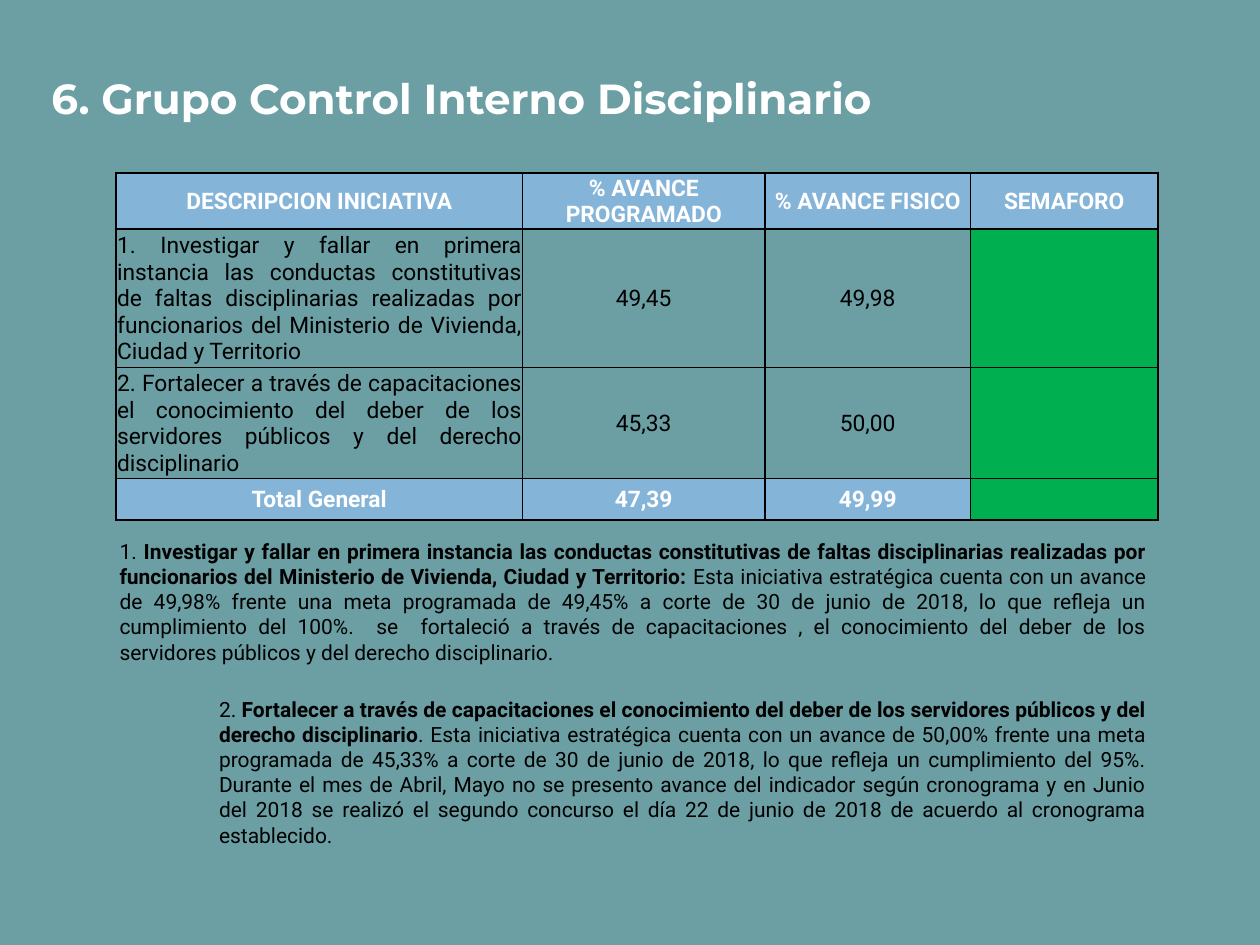
from dataclasses import dataclass

from lxml import etree
from pptx import Presentation, util as u
from pptx.dml.color import RGBColor
from pptx.enum import text
from pptx.oxml.ns import qn

WIDTH, HEIGHT = 10, 7.5


@dataclass(frozen=True)
class Theme:
    background: str = "6B9FA4"
    header: str = "85B4D9"
    signal: str = "00B050"
    light: str = "FFFFFF"
    dark: str = "000000"
    title_font: str = "Montserrat"
    body_font: str = "Roboto"
    title_size: int = 24
    table_size: int = 13
    note_size: int = 12


THEME = Theme()
CENTER, JUSTIFY = text.PP_ALIGN.CENTER, text.PP_ALIGN.JUSTIFY

HEADERS = ["DESCRIPCION INICIATIVA", "% AVANCE PROGRAMADO", "% AVANCE FISICO", "SEMAFORO"]
INITIATIVES = [
    ["1. Investigar y fallar en primera instancia las conductas constitutivas de faltas "
     "disciplinarias realizadas por funcionarios del Ministerio de Vivienda, Ciudad y Territorio",
     "49,45", "49,98", ""],
    ["2. Fortalecer a través de capacitaciones el conocimiento del deber de los servidores "
     "públicos y del derecho disciplinario", "45,33", "50,00", ""],
]
TOTALS = ["Total General", "47,39", "49,99", ""]
COLUMN_SHARES = [0.39, 0.233, 0.197, 0.18]
ROW_SHARES = [0.16, 0.4, 0.32, 0.12]

# Each note: number, bold heading, explanation
NOTES = [
    ("1. ",
     "Investigar y fallar en primera instancia las conductas constitutivas de faltas "
     "disciplinarias realizadas por funcionarios del Ministerio de Vivienda, Ciudad y Territorio: ",
     "Esta iniciativa estratégica cuenta con un avance de 49,98% frente una meta programada de "
     "49,45% a corte de 30 de junio de 2018, lo que refleja un cumplimiento del 100%.  se  "
     "fortaleció a través de capacitaciones , el conocimiento del deber de los servidores "
     "públicos y del derecho disciplinario."),
    ("2. ",
     "Fortalecer a través de capacitaciones el conocimiento del deber de los servidores "
     "públicos y del derecho disciplinario",
     ". Esta iniciativa estratégica cuenta con un avance de 50,00% frente una meta programada de "
     "45,33% a corte de 30 de junio de 2018, lo que refleja un cumplimiento del 95%. Durante el "
     "mes de Abril, Mayo no se presento avance del indicador según cronograma y en Junio del "
     "2018 se realizó el segundo concurso el día 22 de junio de 2018 de acuerdo al cronograma "
     "establecido."),
]


def box(left, top, width, height):
    """Turn shares of the slide into lengths."""
    return (u.Inches(left * WIDTH), u.Inches(top * HEIGHT),
            u.Inches(width * WIDTH), u.Inches(height * HEIGHT))


def add_run(paragraph, words, size, color, bold=False, font=THEME.body_font):
    run = paragraph.add_run()
    run.text = words
    run.font.name, run.font.size, run.font.bold = font, u.Pt(size), bold
    run.font.color.rgb = RGBColor.from_string(color)


def add_text_frame(slide, area):
    frame = slide.shapes.add_textbox(*area).text_frame
    frame.word_wrap = True
    return frame


def add_title(slide, area, words):
    frame = add_text_frame(slide, area)
    frame.vertical_anchor = text.MSO_ANCHOR.BOTTOM
    frame.margin_top = frame.margin_bottom = u.Inches(0.1)
    add_run(frame.paragraphs[0], words, THEME.title_size, THEME.light, True, THEME.title_font)


def add_note(slide, area, number, heading, explanation):
    paragraph = add_text_frame(slide, area).paragraphs[0]
    paragraph.alignment = JUSTIFY
    for words, bold in ((number, False), (heading, True), (explanation, False)):
        add_run(paragraph, words, THEME.note_size, THEME.dark, bold)


def add_borders(cell):
    properties = cell._tc.get_or_add_tcPr()
    for side in ("a:lnL", "a:lnR", "a:lnT", "a:lnB"):
        line = etree.SubElement(properties, qn(side), w=str(u.Pt(1)))
        fill = etree.SubElement(line, qn("a:solidFill"))
        etree.SubElement(fill, qn("a:srgbClr"), val=THEME.dark)


def fill_cell(cell, words, emphasized, alignment, fill):
    add_borders(cell)
    if fill:
        cell.fill.solid()
        cell.fill.fore_color.rgb = RGBColor.from_string(fill)
    else:
        cell.fill.background()
    cell.margin_left = cell.margin_right = cell.margin_top = u.Inches(0.01)
    cell.margin_bottom = 0
    cell.vertical_anchor = text.MSO_ANCHOR.MIDDLE
    paragraph = cell.text_frame.paragraphs[0]
    paragraph.alignment = alignment
    if words:
        color = THEME.light if emphasized else THEME.dark
        add_run(paragraph, words, THEME.table_size, color, emphasized)


def add_progress_table(slide, area):
    rows = [HEADERS, *INITIATIVES, TOTALS]
    table = slide.shapes.add_table(len(rows), len(HEADERS), *area).table
    table.first_row = table.horz_banding = False
    for column, share in zip(table.columns, COLUMN_SHARES):
        column.width = int(area[2] * share)
    for row, share in zip(table.rows, ROW_SHARES):
        row.height = int(area[3] * share)

    for row_index, values in enumerate(rows):
        emphasized = values in (HEADERS, TOTALS)
        for column_index, words in enumerate(values):
            justified = column_index == 0 and not emphasized
            # Cells without words are the traffic lights
            fill = (THEME.header if emphasized else None) if words else THEME.signal
            fill_cell(table.cell(row_index, column_index), words, emphasized,
                      JUSTIFY if justified else CENTER, fill)


def main():
    presentation = Presentation()
    presentation.slide_width, presentation.slide_height = u.Inches(WIDTH), u.Inches(HEIGHT)
    slide = presentation.slides.add_slide(presentation.slide_layouts[6])
    slide.background.fill.solid()
    slide.background.fill.fore_color.rgb = RGBColor.from_string(THEME.background)

    add_title(slide, box(0.031, 0.04, 0.919, 0.103), "6. Grupo Control Interno Disciplinario")
    add_progress_table(slide, box(0.092, 0.183, 0.827, 0.367))
    note_areas = [box(0.085, 0.563, 0.835, 0.148), box(0.164, 0.73, 0.756, 0.175)]
    for area, note in zip(note_areas, NOTES):
        add_note(slide, area, *note)

    presentation.save("out.pptx")


if __name__ == "__main__":
    main()
